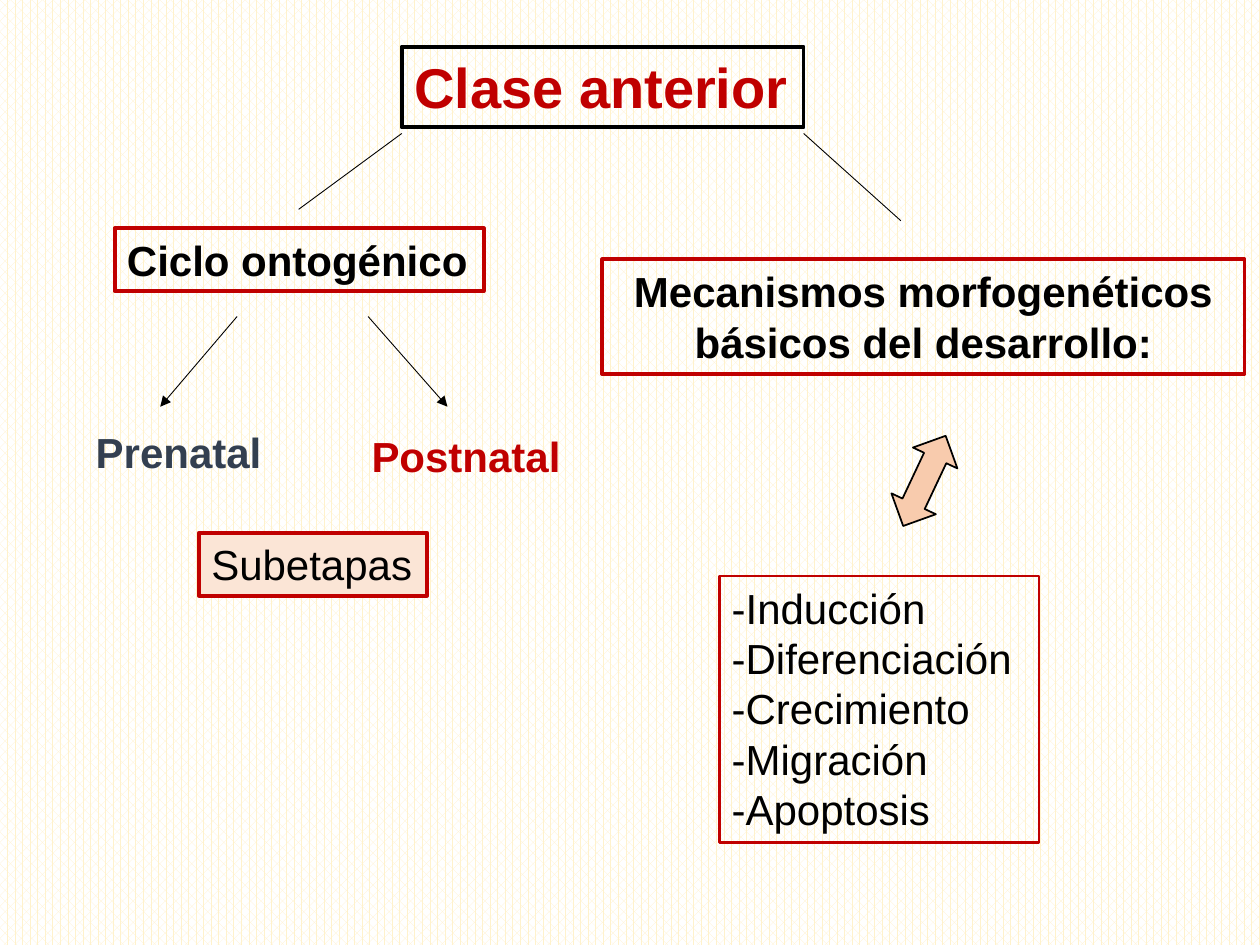
import pptx
import pptx.util
import pptx.dml.color
import pptx.enum.dml
import pptx.enum.shapes
import pptx.enum.text
import pptx.oxml.ns
import lxml.etree

Cm = pptx.util.Cm
Pt = pptx.util.Pt
SHAPE = pptx.enum.shapes.MSO_SHAPE
ALIGN = pptx.enum.text.PP_ALIGN
COLORS = {"ink": "000000", "red": "C00000", "slate": "333F50", "peach": "F8CBAD",
          "blush": "FBE5D6", "cream": "FFF2CC", "white": "FFFFFF"}


def rgb(name):
    """Return the named colour."""
    return pptx.dml.color.RGBColor.from_string(COLORS[name])


def add_label(s, box, lines, color="ink", size=24, bold=True, border=None,
              width=2.25, fill=None, wrap=False, align=ALIGN.LEFT):
    """Add a text box with an optional border and fill."""
    sp = s.shapes.add_textbox(*map(Cm, box))
    if border:
        sp.line.color.rgb = rgb(border)
        sp.line.width = Pt(width)
    if fill:
        sp.fill.solid()
        sp.fill.fore_color.rgb = rgb(fill)
    tf = sp.text_frame
    tf.word_wrap = wrap
    tf.auto_size = pptx.enum.text.MSO_AUTO_SIZE.SHAPE_TO_FIT_TEXT
    tf.text = "\n".join(lines)
    for p in tf.paragraphs:
        p.alignment = align
        for r in p.runs:
            r.font.name = "Arial"
            r.font.size = Pt(size)
            r.font.bold = bold
            r.font.color.rgb = rgb(color)


def add_branch(s, x1, y1, x2, y2, arrow=False):
    """Add a thin line, with an arrowhead at its end if asked."""
    cx = s.shapes.add_connector(pptx.enum.shapes.MSO_CONNECTOR.STRAIGHT,
                                Cm(x1), Cm(y1), Cm(x2), Cm(y2))
    cx.line.color.rgb = rgb("ink")
    cx.line.width = Pt(0.5)
    qn = pptx.oxml.ns.qn
    if arrow:
        lxml.etree.SubElement(cx.line._get_or_add_ln(), qn("a:tailEnd"), type="triangle")
    lxml.etree.SubElement(cx._element.spPr, qn("a:effectLst"))


def add_title(s, x, y, w, h):
    """Add the title and its two branches."""
    add_label(s, (x, y, w, h), ["Clase anterior"], "red", 32, border="ink")
    base = y + h + 0.12
    add_branch(s, x, base, x - 2.08, base + 1.53)
    add_branch(s, x + w, base, x + w + 1.96, base + 1.76)


def add_cycle(s, x, y):
    """Add the life cycle with its two stages."""
    h = 1.27
    add_label(s, (x + 0.63, y, 7.44, h), ["Ciclo ontogénico"], border="red")
    add_label(s, (x, y + 3.88, 3.89, h), ["Prenatal"], "slate")
    add_label(s, (x + 5.56, y + 3.96, 4.37, h), ["Postnatal"], "red")
    for start, end in ((3.1, 1.55), (5.74, 7.34)):
        add_branch(s, x + start, y + 1.78, x + end, y + 3.6, arrow=True)
    add_label(s, (x + 2.33, y + 6.14, 4.6, h), ["Subetapas"], bold=False,
              border="red", fill="blush")


def add_mechanisms(s, x, y):
    """Add the mechanisms heading, the double arrow and the list."""
    add_label(s, (x, y, 12.95, 2.31), ["Mecanismos morfogenéticos básicos del desarrollo:"],
              border="red", wrap=True, align=ALIGN.CENTER)
    names = ["Inducción", "Diferenciación", "Crecimiento", "Migración", "Apoptosis"]
    add_label(s, (x + 2.36, y + 6.38, 6.45, 5.38), ["-" + name for name in names],
              bold=False, border="red", width=1.5)
    sp = s.shapes.add_shape(SHAPE.UP_DOWN_ARROW, Cm(x + 6), Cm(y + 3.46), Cm(0.99), Cm(2.01))
    sp.rotation = 25.2
    sp.shadow.inherit = False
    sp.fill.solid()
    sp.fill.fore_color.rgb = rgb("peach")
    sp.line.color.rgb = rgb("ink")
    sp.line.width = Pt(1)


def main():
    """Build and save the slide."""
    prs = pptx.Presentation()
    prs.slide_width, prs.slide_height = Cm(25.4), Cm(19.05)
    s = prs.slides.add_slide(prs.slide_layouts[6])
    fill = s.background.fill
    fill.patterned()
    fill.pattern = pptx.enum.dml.MSO_PATTERN.PERCENT_60
    fill.fore_color.rgb = rgb("cream")
    fill.back_color.rgb = rgb("white")
    add_title(s, 8.1, 0.94, 8.1, 1.63)
    add_cycle(s, 1.68, 4.6)
    add_mechanisms(s, 12.14, 5.23)
    prs.save("out.pptx")


if __name__ == "__main__":
    main()
